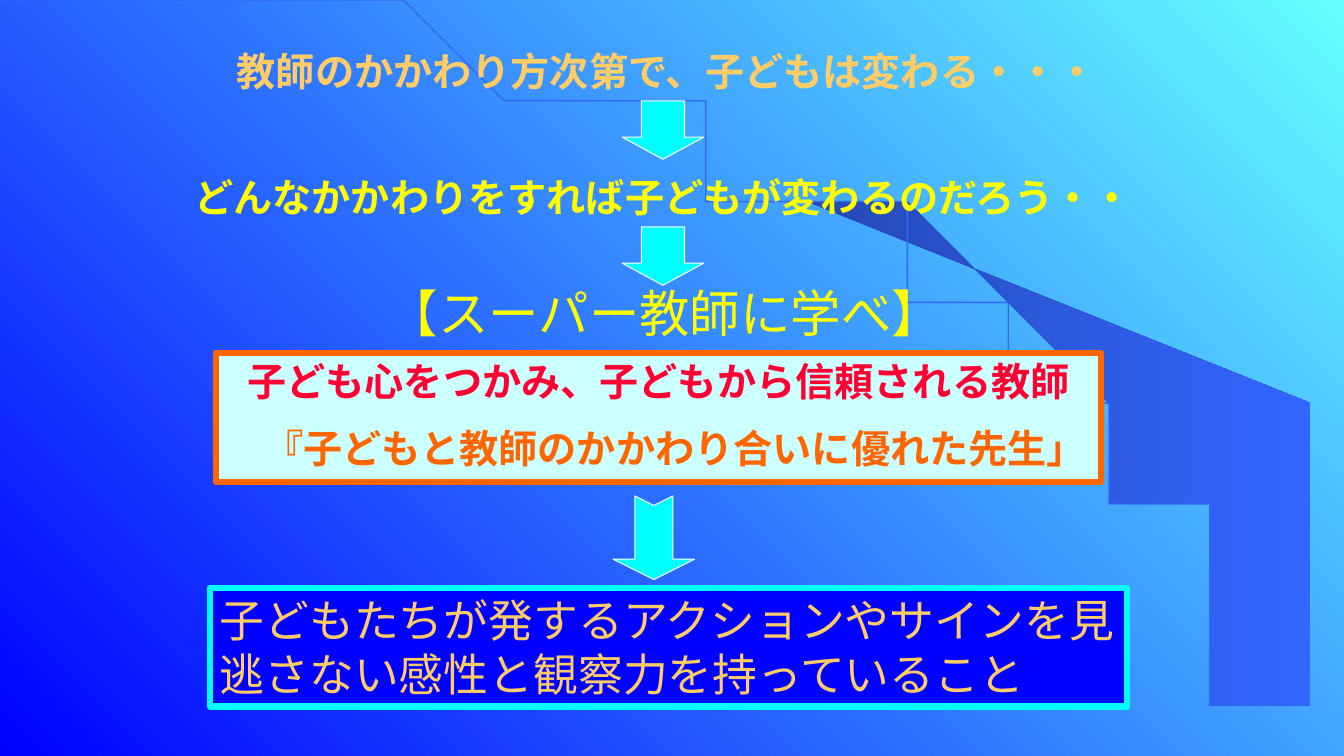
from dataclasses import dataclass

from lxml.etree import SubElement
from pptx import Presentation
from pptx.dml.color import RGBColor
from pptx.enum.shapes import MSO_SHAPE
from pptx.enum.text import MSO_ANCHOR, MSO_AUTO_SIZE, PP_ALIGN
from pptx.oxml.ns import qn
from pptx.util import Inches, Pt


@dataclass(frozen=True)
class Theme:
    blue: str = "0000FF"
    sky: str = "66FFFF"
    wedge_dark: str = "2449B6"
    wedge_light: str = "3366FF"
    cyan: str = "00FFFF"
    pale: str = "CCFFFF"
    white: str = "FFFFFF"
    sand: str = "FFCC66"
    yellow: str = "FFFF00"
    orange: str = "FF6600"
    red: str = "FF0033"
    gap: int = 24
    body: int = 28
    sign: int = 32
    title: int = 36
    frame: float = 4.5
    font: str = "Arial"
    cjk: str = "Noto Sans CJK JP"


T = Theme()


@dataclass(frozen=True)
class Run:
    text: str
    size: int
    color: str
    bold: bool = False
    font: str = T.font


@dataclass(frozen=True)
class Block:
    box: tuple[float, float, float, float]
    paragraphs: list[list[Run]]
    fill: str = ""
    line: str = ""
    align: PP_ALIGN = PP_ALIGN.LEFT


@dataclass(frozen=True)
class Arrow:
    box: tuple[float, float, float, float]
    kind: MSO_SHAPE = MSO_SHAPE.DOWN_ARROW
    adjustments: tuple[float, float] = (0.529, 0.378)
    rotation: int = 0


NOTCHED = Arrow((6.07, 4.93, 0.83, 0.81), MSO_SHAPE.NOTCHED_RIGHT_ARROW, (0.467, 0.25), 90)

ITEMS = [
    Block((2.25, 0.42, 9.03, 0.57),
          [[Run("教師のかかわり方次第で、子どもは変わる・・・", T.body, T.sand, True)]]),
    Block((2.14, 3.5, 8.78, 1.28),
          [[Run("子ども心をつかみ、子どもから信頼される教師", T.body, T.red, True)],
           [Run("　", T.gap, T.white, True),
            Run("『子どもと教師のかかわり合いに優れた先生」", T.body, T.orange, True)]],
          T.pale, T.orange, PP_ALIGN.CENTER),
    Block((3.75, 2.75, 5.83, 0.7),
          [[Run("【スーパー教師に学べ】", T.title, T.yellow)]]),
    Block((2.08, 5.83, 9.1, 1.18),
          [[Run("子どもたちが発するアクションやサインを見逃さない感性と観察力を持っていること",
                T.sign, T.sand, font=T.cjk)]],
          T.blue, T.cyan),
    NOTCHED,
    Arrow((6.17, 1, 0.81, 0.58)),
    Block((1.83, 1.67, 9.83, 0.57),
          [[Run("どんなかかわりをすれば子どもが変わるのだろう・・", T.body, T.yellow, True)]]),
    Arrow((6.17, 2.25, 0.81, 0.58)),
]

WEDGE = [(12.27, 7.48), (13.31, 7.49), (13.31, 4.23), (7.86, 1.73), (8.32, 1.99),
         (8.7, 2.22), (9.13, 2.5), (9.55, 2.8), (10.16, 3.3), (10.7, 3.84),
         (11.1, 4.31), (11.44, 4.79), (11.71, 5.28), (11.91, 5.72), (12.04, 6.09),
         (12.17, 6.56), (12.23, 6.96)]
ARC = [(0, 0), (6.77, 0), (12.26, 3.35), (12.26, 7.49)]
ARC_STEPS = 80


def rgb(color: str) -> RGBColor:
    return RGBColor.from_string(color)


def set_gradient(fill, start: str, end: str, angle: float) -> None:
    fill.gradient()
    fill.gradient_angle = angle
    for stop, color, position in zip(fill.gradient_stops, (start, end), (0, 1)):
        stop.color.rgb = rgb(color)
        stop.position = position


def set_line(sp, color: str, width: float) -> None:
    sp.line.color.rgb = rgb(color)
    sp.line.width = Pt(width)


def bezier(points: list[tuple[float, float]], t: float) -> tuple[float, float]:
    weights = ((1 - t) ** 3, 3 * t * (1 - t) ** 2, 3 * t * t * (1 - t), t ** 3)
    return (sum(w * x for w, (x, _) in zip(weights, points)),
            sum(w * y for w, (_, y) in zip(weights, points)))


def add_outline(s, points: list[tuple[float, float]], close: bool):
    builder = s.shapes.build_freeform(*points[0], scale=Inches(1))
    builder.add_line_segments(points[1:], close=close)
    sp = builder.convert_to_shape()
    sp.shadow.inherit = False
    return sp


def add_run(p, run: Run) -> None:
    r = p.add_run()
    r.text = run.text
    formats = {"size": Pt(run.size), "bold": run.bold, "name": run.font}
    for name, value in formats.items():
        setattr(r.font, name, value)
    r.font.color.rgb = rgb(run.color)
    # East Asian characters use the same typeface
    SubElement(r.font._element, qn("a:ea"), typeface=run.font)


def add_block(s, block: Block) -> None:
    box = [Inches(v) for v in block.box]
    if block.fill:
        sp = s.shapes.add_shape(MSO_SHAPE.RECTANGLE, *box)
        sp.shadow.inherit = False
        sp.fill.solid()
        sp.fill.fore_color.rgb = rgb(block.fill)
        set_line(sp, block.line, T.frame)
    else:
        sp = s.shapes.add_textbox(*box)
    tf = sp.text_frame
    formats = {"word_wrap": True, "auto_size": MSO_AUTO_SIZE.SHAPE_TO_FIT_TEXT,
               "vertical_anchor": MSO_ANCHOR.TOP}
    for name, value in formats.items():
        setattr(tf, name, value)
    for i, runs in enumerate(block.paragraphs):
        p = tf.add_paragraph() if i else tf.paragraphs[0]
        p.alignment = block.align
        # Space before is half a line
        before = SubElement(p._p.get_or_add_pPr(), qn("a:spcBef"))
        SubElement(before, qn("a:spcPct"), val="50000")
        for run in runs:
            add_run(p, run)


def add_arrow(s, arrow: Arrow) -> None:
    sp = s.shapes.add_shape(arrow.kind, *[Inches(v) for v in arrow.box])
    sp.shadow.inherit = False
    sp.rotation = arrow.rotation
    for i, value in enumerate(arrow.adjustments):
        sp.adjustments[i] = value
    sp.fill.solid()
    sp.fill.fore_color.rgb = rgb(T.cyan)
    set_line(sp, T.white, 0.75)


def main() -> None:
    prs = Presentation()
    prs.slide_width, prs.slide_height = Inches(13.33), Inches(7.5)
    s = prs.slides.add_slide(prs.slide_layouts[6])

    # Backdrop: diagonal gradient, shaded wedge and sweeping arc
    set_gradient(s.background.fill, T.blue, T.sky, 45)
    wedge = add_outline(s, WEDGE, True)
    set_gradient(wedge.fill, T.wedge_dark, T.wedge_light, 0)
    wedge.line.fill.background()
    arc = add_outline(s, [bezier(ARC, i / ARC_STEPS) for i in range(ARC_STEPS + 1)], False)
    arc.fill.background()
    set_line(arc, T.wedge_light, 1)

    # Messages and the arrows between them
    for item in ITEMS:
        if isinstance(item, Block):
            add_block(s, item)
        else:
            add_arrow(s, item)

    prs.save("out.pptx")


if __name__ == "__main__":
    main()
